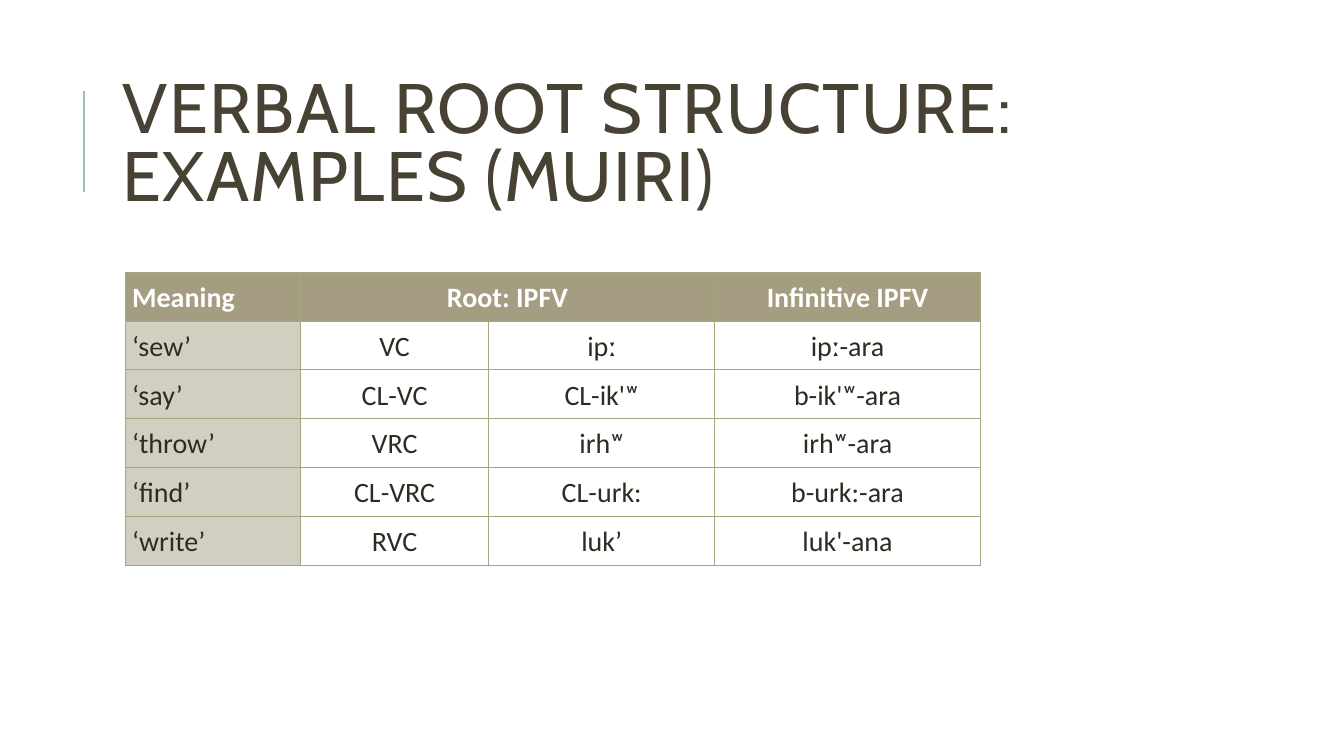
from lxml import etree
from pptx import Presentation
from pptx.dml.color import RGBColor
from pptx.enum import shapes, text
from pptx.oxml import ns
from pptx.util import Cm, Pt

DARK = RGBColor(0x47, 0x42, 0x33)
INK = RGBColor(0x2E, 0x2B, 0x21)
WHITE = RGBColor(0xFF, 0xFF, 0xFF)
HEAD = RGBColor(0xA5, 0x9D, 0x82)
SIDE = RGBColor(0xD2, 0xCE, 0xC0)
EDGE = RGBColor(0xA9, 0xA5, 0x7C)
TEAL = RGBColor(0x9C, 0xBE, 0xBD)


def write(para, words, font, size, color, bold=False):
    run = para.add_run()
    run.text = words
    run.font.name = font
    run.font.size = Pt(size)
    run.font.color.rgb = color
    run.font.bold = bold
    return run


def border(cell):
    props = cell._tc.get_or_add_tcPr()
    for side in ("a:lnL", "a:lnR", "a:lnT", "a:lnB"):
        line = etree.SubElement(props, ns.qn(side), w=str(Pt(0.75)))
        fill = etree.SubElement(line, ns.qn("a:solidFill"))
        etree.SubElement(fill, ns.qn("a:srgbClr"), val=str(EDGE))


deck = Presentation()
deck.slide_width = Cm(33.87)
deck.slide_height = Cm(19.05)
slide = deck.slides.add_slide(deck.slide_layouts[5])

rule = slide.shapes.add_connector(
    shapes.MSO_CONNECTOR.STRAIGHT, Cm(2.12), Cm(4.83), Cm(2.12), Cm(2.3))
rule.line.color.rgb = TEAL
rule.line.width = Pt(1.5)
etree.SubElement(rule._element.spPr, ns.qn("a:effectLst"))

title = slide.shapes.title
title.left, title.top = Cm(2.84), Cm(1.63)
title.width, title.height = Cm(27), Cm(4.17)
frame = title.text_frame
frame.word_wrap = True
frame.auto_size = text.MSO_AUTO_SIZE.NONE
frame.vertical_anchor = text.MSO_ANCHOR.MIDDLE
para = frame.paragraphs[0]
para.alignment = text.PP_ALIGN.LEFT
para.line_spacing = 0.8
run = write(para, "VERBAL ROOT STRUCTURE: EXAMPLES (MUIRI)", "Cabin", 50, DARK)
run.font._element.set("spc", "100")

rows = [
    ("Meaning", "Root: IPFV", "", "Infinitive IPFV"),
    ("‘sew’", "VC", "ipː", "ipː-ara"),
    ("‘say’", "CL-VC", "CL-ik'ʷ", "b-ik'ʷ-ara"),
    ("‘throw’", "VRC", "irhʷ", "irhʷ-ara"),
    ("‘find’", "CL-VRC", "CL-urk:", "b-urk:-ara"),
    ("‘write’", "RVC", "luk’", "luk'-ana"),
]
widths = [4.42, 4.75, 5.69, 6.7]
high = 1.23
grid = slide.shapes.add_table(
    len(rows), len(widths), Cm(3.15), Cm(6.86),
    Cm(sum(widths)), Cm(high * len(rows))).table
for col, wide in zip(grid.columns, widths):
    col.width = Cm(wide)
grid.cell(0, 1).merge(grid.cell(0, 2))

for r, row in enumerate(rows):
    grid.rows[r].height = Cm(high)
    for c, words in enumerate(row):
        cell = grid.cell(r, c)
        cell.margin_left = cell.margin_right = Cm(0.18)
        cell.margin_top = cell.margin_bottom = 0
        cell.vertical_anchor = text.MSO_ANCHOR.MIDDLE
        border(cell)
        if r == 0 or c == 0:
            cell.fill.solid()
            cell.fill.fore_color.rgb = HEAD if r == 0 else SIDE
        else:
            cell.fill.background()
        if words:
            para = cell.text_frame.paragraphs[0]
            para.alignment = text.PP_ALIGN.CENTER if c else text.PP_ALIGN.JUSTIFY
            para.line_spacing = 1.07
            para.space_after = Pt(0 if r else 2)
            write(para, words, "Calibri", 20, INK if r else WHITE, r == 0)

deck.save("out.pptx")
